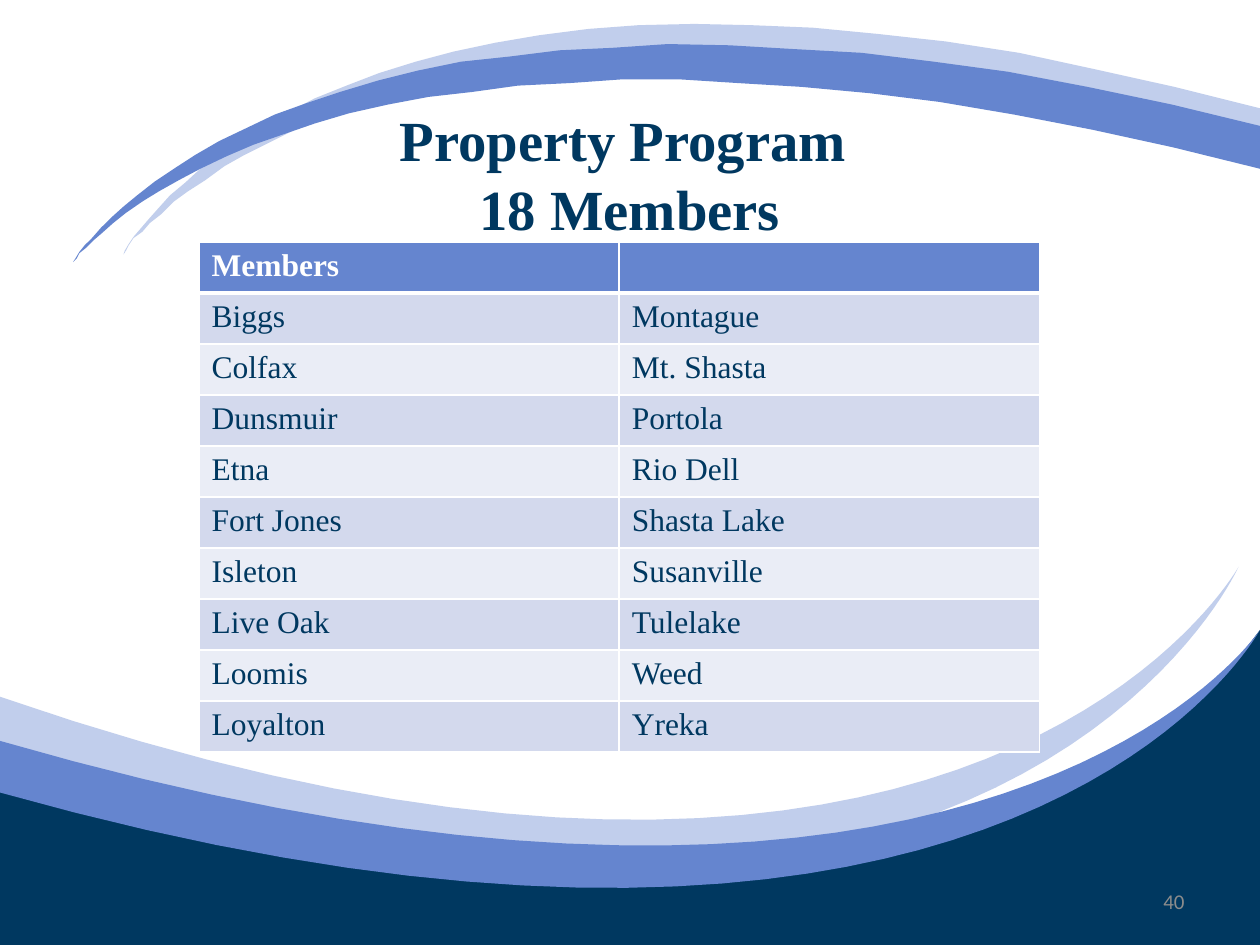
import pptx
import pptx.dml.color
import pptx.enum.text
import pptx.util
from lxml import etree
from pptx.oxml.ns import qn

PX = 9144  # EMU per px, 100 px to the inch
COLORS = {
    "navy": "003860", "blue": "6585CF", "pale": "C1CEEC", "white": "FFFFFF",
    "grey": "8C8C8C", "odd_row": "D3D9ED", "even_row": "EAEDF6",
}
SERIF, SANS = "Times New Roman", "Calibri"
ALIGN = pptx.enum.text.PP_ALIGN
MIDDLE = pptx.enum.text.MSO_ANCHOR.MIDDLE


def rgb(color):
    return pptx.dml.color.RGBColor.from_string(COLORS[color])


def bezier(start, control1, control2, end, steps=40):
    """Points along a cubic curve, both ends included."""
    points = []
    for i in range(steps + 1):
        t = i / steps
        weights = ((1 - t) ** 3, 3 * t * (1 - t) ** 2, 3 * t * t * (1 - t), t ** 3)
        corners = (start, control1, control2, end)
        points.append(tuple(sum(w * c[axis] for w, c in zip(weights, corners))
                            for axis in (0, 1)))
    return points


class SlideBuilder:
    def __init__(self, slide):
        self.slide = slide

    def font(self, paragraph, size, color, face=SERIF, bold=False):
        font = paragraph.font
        font.name, font.size, font.bold = face, pptx.util.Pt(size), bold
        font.color.rgb = rgb(color)

    def swoosh(self, points, color):
        outline = [(round(x * PX), round(y * PX)) for x, y in points]
        builder = self.slide.shapes.build_freeform(*outline[0], scale=1.0)
        builder.add_line_segments(outline[1:], close=True)
        shape = builder.convert_to_shape()
        shape.shadow.inherit = False
        shape.fill.solid()
        shape.fill.fore_color.rgb = rgb(color)
        shape.line.fill.background()

    def text(self, box, wording, align, size, color, leading=None, **style):
        frame = self.slide.shapes.add_textbox(*(v * PX for v in box)).text_frame
        frame.word_wrap = True
        frame.vertical_anchor = MIDDLE
        paragraph = frame.paragraphs[0]
        paragraph.text = wording
        paragraph.alignment = align
        if leading:
            paragraph.line_spacing = pptx.util.Pt(leading)
        self.font(paragraph, size, color, **style)

    def border(self, cell, widths):
        properties = cell._tc.get_or_add_tcPr()
        for side, width in zip("LRTB", widths):
            line = etree.SubElement(properties, qn(f"a:ln{side}"),
                                    w=str(pptx.util.Pt(width)))
            fill = etree.SubElement(line, qn("a:solidFill"))
            etree.SubElement(fill, qn("a:srgbClr"), val=COLORS["white"])

    def table(self, box, rows):
        grid = self.slide.shapes.add_table(
            len(rows), len(rows[0]), *(v * PX for v in box)).table
        for r, row in enumerate(rows):
            header = r == 0
            fill = "blue" if header else ("even_row", "odd_row")[r % 2]
            for c, wording in enumerate(row):
                cell = grid.cell(r, c)
                self.border(cell, (1, 1, 3 if r == 1 else 1, 3 if header else 1))
                cell.fill.solid()
                cell.fill.fore_color.rgb = rgb(fill)
                cell.text = wording
                self.font(cell.text_frame.paragraphs[0], 18,
                          "white" if header else "navy", bold=header)


# Edges of the two upper swooshes
PALE_LOWER = [
    (1000, 123), (934, 105), (872, 90), (813, 77), (756, 68), (702, 60), (652, 54),
    (604, 50), (557, 49), (514, 49), (475, 50), (436, 54), (401, 57), (367, 63),
    (336, 70), (308, 77), (281, 85), (257, 95), (234, 103), (214, 113), (194, 123),
    (178, 132), (163, 143), (149, 152), (138, 160), (128, 170), (119, 177),
    (113, 184), (106, 189), (102, 195), (100, 199), (98, 202)]
PALE_UPPER = [
    (99, 199), (102, 194), (106, 188), (112, 181), (118, 174), (126, 165), (135, 155),
    (147, 145), (159, 134), (174, 123), (190, 112), (208, 100), (229, 89), (250, 78),
    (275, 68), (301, 58), (330, 49), (360, 41), (393, 34), (428, 28), (467, 23),
    (507, 20), (551, 19), (596, 20), (645, 22), (697, 27), (751, 33), (809, 42),
    (869, 55), (932, 69), (1000, 86)]
BLUE_LOWER = [
    (1000, 134), (931, 117), (867, 103), (805, 91), (746, 81), (690, 74), (636, 69),
    (586, 66), (539, 63), (494, 63), (452, 66), (411, 68), (375, 73), (340, 77),
    (308, 83), (277, 90), (250, 98), (224, 107), (201, 115), (180, 124), (159, 134),
    (142, 143), (126, 152), (113, 160), (100, 169), (90, 177), (81, 185), (74, 191),
    (68, 197), (63, 201), (61, 205), (58, 208)]
BLUE_UPPER = [
    (60, 205), (63, 200), (67, 195), (73, 189), (80, 181), (88, 173), (98, 164),
    (109, 155), (123, 144), (138, 134), (155, 123), (174, 112), (195, 102), (218, 91),
    (243, 82), (270, 73), (300, 64), (332, 56), (366, 49), (404, 45), (444, 40),
    (486, 38), (530, 35), (579, 36), (630, 39), (684, 42), (741, 49), (800, 57),
    (863, 69), (930, 83), (1000, 100)]

# Edges of the lower waves
NAVY_WAVE = (bezier((0, 623), (95, 648), (247, 692), (436, 693))
             + bezier((436, 693), (852, 700), (961, 552), (1000, 500))
             + [(1000, 750), (0, 750)])
PALE_WAVE = (bezier((0, 553), (776, 822), (983, 450), (983, 450))
             + bezier((983, 450), (983, 450), (796, 867), (0, 601)))
BLUE_WAVE = (bezier((0, 588), (790, 817), (1000, 500), (1000, 500))
             + bezier((1000, 500), (1000, 500), (809, 856), (0, 629)))

MEMBERS = [
    ("Members", ""),
    ("Biggs", "Montague"),
    ("Colfax", "Mt. Shasta"),
    ("Dunsmuir", "Portola"),
    ("Etna", "Rio Dell"),
    ("Fort Jones", "Shasta Lake"),
    ("Isleton", "Susanville"),
    ("Live Oak", "Tulelake"),
    ("Loomis", "Weed"),
    ("Loyalton", "Yreka"),
]


def main():
    deck = pptx.Presentation()
    deck.slide_width, deck.slide_height = 1000 * PX, 750 * PX
    page = SlideBuilder(deck.slides.add_slide(deck.slide_layouts[6]))

    # Background swooshes, back to front
    for outline, color in (
            (PALE_LOWER + PALE_UPPER, "pale"), (BLUE_LOWER + BLUE_UPPER, "blue"),
            (NAVY_WAVE, "navy"), (PALE_WAVE, "pale"), (BLUE_WAVE, "blue")):
        page.swoosh(outline, color)

    # Title and page number
    page.text((50, 75, 900, 125), "Property Program \v18 Members", ALIGN.CENTER,
              32.4, "navy", leading=39, bold=True)
    page.text((717, 695, 233, 40), "40", ALIGN.RIGHT, 12, "grey", face=SANS)

    # Member table
    page.table((158, 192, 667, 405), MEMBERS)

    deck.save("out.pptx")


if __name__ == "__main__":
    main()
